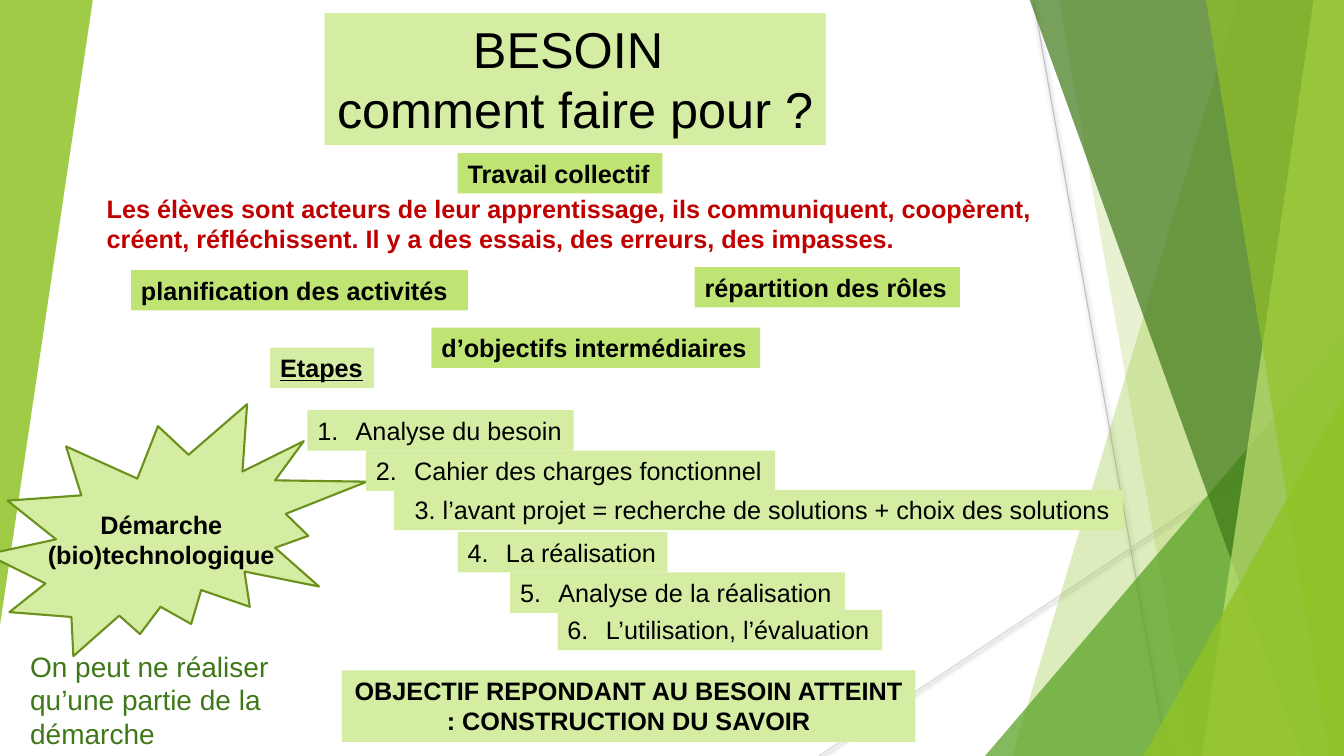
import lxml.etree
import pptx
import pptx.dml.color
import pptx.enum.shapes
import pptx.enum.text
import pptx.oxml.ns
import pptx.util

Inches = pptx.util.Inches
Shapes = pptx.enum.shapes.MSO_SHAPE
Align = pptx.enum.text.PP_ALIGN
qn = pptx.oxml.ns.qn

PALE, LIME, GREEN, FOREST = "D5EDA2", "C0E474", "90C226", "3F7819"


def color(value):
    return pptx.dml.color.RGBColor.from_string(value)


def add_xml(parent, tag, **attributes):
    return lxml.etree.SubElement(parent, qn(tag), {key: str(value) for key, value in attributes.items()})


class SlideBuilder:
    """Holds the text style and the current slide, and draws each kind of element."""

    font_name = "Arial"
    text_color = "000000"

    def __init__(self, slide):
        self.slide = slide

    def paint(self, shape, fill, opacity=100, line=None):
        shape.shadow.inherit = False
        shape.fill.solid()
        shape.fill.fore_color.rgb = color(fill)
        if opacity < 100:
            solid = shape._element.spPr.find(qn("a:solidFill"))
            add_xml(solid[0], "a:alpha", val=opacity * 1000)
        if line:
            shape.line.color.rgb = color(line)
            shape.line.width = pptx.util.Pt(1.5)
        else:
            shape.line.fill.background()
        return shape

    def preset(self, kind, box, fill, **paint):
        shape = self.slide.shapes.add_shape(kind, *map(Inches, box))
        return self.paint(shape, fill, **paint)

    def triangle(self, box, fill, opacity, rotation=0):
        shape = self.preset(Shapes.ISOSCELES_TRIANGLE, box, fill, opacity=opacity)
        shape.adjustments[0] = 1
        shape.rotation = rotation

    def band(self, top_x, bottom_x, fill, opacity):
        corners = [(top_x, -0.01), (13.33, -0.01), (13.33, 7.5), (bottom_x, 7.5)]
        points = [(Inches(x), Inches(y)) for x, y in corners]
        builder = self.slide.shapes.build_freeform(*points[0])
        builder.add_line_segments(points[1:])
        self.paint(builder.convert_to_shape(), fill, opacity)

    def line(self, start, end, stroke):
        connector = self.slide.shapes.add_connector(
            pptx.enum.shapes.MSO_CONNECTOR.STRAIGHT, *map(Inches, start + end))
        connector.line.color.rgb = color(stroke)
        connector.line.width = pptx.util.Pt(0.75)
        effects = add_xml(connector._element.spPr, "a:effectLst")
        shadow = add_xml(effects, "a:outerShdw", blurRad=pptx.util.Pt(3.1),
                         dist=pptx.util.Pt(1.6), dir=5400000, rotWithShape=0)
        add_xml(add_xml(shadow, "a:srgbClr", val="000000"), "a:alpha", val=38000)

    def set_text(self, shape, lines, align=Align.LEFT, wrap=False, size=18, text_color=None, number=None, **style):
        frame = shape.text_frame
        frame.word_wrap = wrap
        frame.auto_size = pptx.enum.text.MSO_AUTO_SIZE.SHAPE_TO_FIT_TEXT
        frame.vertical_anchor = pptx.enum.text.MSO_ANCHOR.TOP
        font_values = {"name": self.font_name, "size": pptx.util.Pt(size), **style}
        for index, text in enumerate(lines):
            paragraph = frame.add_paragraph() if index else frame.paragraphs[0]
            paragraph.alignment = align
            run = paragraph.add_run()
            run.text = text
            for name, value in font_values.items():
                setattr(run.font, name, value)
            run.font.color.rgb = color(text_color or self.text_color)
            if number:
                properties = paragraph._p.get_or_add_pPr()
                properties.set("marL", str(Inches(0.38)))
                properties.set("indent", str(-Inches(0.38)))
                add_xml(properties, "a:buFont", typeface="+mj-lt")
                add_xml(properties, "a:buAutoNum", type="arabicPeriod", startAt=number)

    def label(self, box, lines, fill=PALE, **style):
        self.set_text(self.preset(Shapes.RECTANGLE, box, fill), lines, **style)

    def text(self, box, text, **style):
        self.set_text(self.slide.shapes.add_textbox(*map(Inches, box)), [text], wrap=True, **style)


def draw_background(builder):
    builder.line((10.25, 0), (11.58, 7.5), "BFBFBF")
    builder.line((13.33, 4.03), (8.12, 7.5), "D9D9D9")
    builder.band(12.28, 10.04, GREEN, 30)
    builder.band(10.5, 11.83, GREEN, 20)
    builder.triangle((9.77, 3.33, 3.56, 4.17), "54A021", 72)
    builder.band(10.21, 12.91, FOREST, 70)
    builder.band(13.03, 11.92, LIME, 70)
    builder.band(11.96, 13.18, GREEN, 65)
    builder.triangle((11.34, 3.93, 1.99, 3.57), GREEN, 80)
    builder.triangle((0, 0, 0.92, 6.2), GREEN, 85, rotation=180)


def draw_content(builder):
    builder.preset(Shapes.EXPLOSION2, (-0.13, 4.01, 3.77, 2.5), PALE, line="6B901C")
    builder.label((3.22, 0.13, 4.97, 1.31), ["BESOIN ", "comment faire pour ?"],
                  align=Align.CENTER, size=36)
    builder.label((3.39, 6.65, 5.69, 0.71),
                  ["OBJECTIF REPONDANT AU BESOIN ATTEINT : CONSTRUCTION DU SAVOIR"],
                  align=Align.CENTER, wrap=True, bold=True)
    builder.label((2.68, 3.45, 1.03, 0.4), ["Etapes"], bold=True, underline=True)
    builder.text((0.27, 5, 2.66, 0.71), "Démarche (bio)technologique",
                 align=Align.CENTER, bold=True)
    builder.text((0.96, 1.87, 10.22, 0.71),
                 "Les élèves sont acteurs de leur apprentissage, ils communiquent, coopèrent, "
                 "créent, réfléchissent. Il y a des essais, des erreurs, des impasses.",
                 text_color="C00000", bold=True)

    steps = [
        (1, 3.05, 4.07, 2.64, "Analyse du besoin"),
        (2, 3.63, 4.47, 4.06, "Cahier des charges fonctionnel"),
        (5, 5.06, 5.68, 3.32, "Analyse de la réalisation"),
        (6, 5.53, 6.05, 3.22, "L’utilisation, l’évaluation"),
        (4, 4.54, 5.28, 2.08, "La réalisation"),
    ]
    for number, left, top, width, step in steps:
        builder.label((left, top, width, 0.4), [step], number=number)
    builder.label((3.91, 4.86, 7.23, 0.4),
                  [" 3. l’avant projet = recherche de solutions + choix des solutions"],
                  align=Align.CENTER)
    builder.text((0.2, 6.39, 2.89, 1.11), "On peut ne réaliser qu’une partie de la démarche",
                 size=20, text_color=FOREST)

    topics = [
        (4.54, 1.52, 2.03, "Travail collectif"),
        (4.28, 3.25, 3.26, "d’objectifs intermédiaires"),
        (6.89, 2.65, 2.63, "répartition des rôles"),
        (1.3, 2.68, 3.34, "planification des activités"),
    ]
    for left, top, width, topic in topics:
        builder.label((left, top, width, 0.4), [topic], fill=LIME, bold=True)


def main():
    presentation = pptx.Presentation()
    presentation.slide_width = Inches(13.33)
    presentation.slide_height = Inches(7.5)
    builder = SlideBuilder(presentation.slides.add_slide(presentation.slide_layouts[6]))
    draw_background(builder)
    draw_content(builder)
    presentation.save("out.pptx")


if __name__ == "__main__":
    main()
